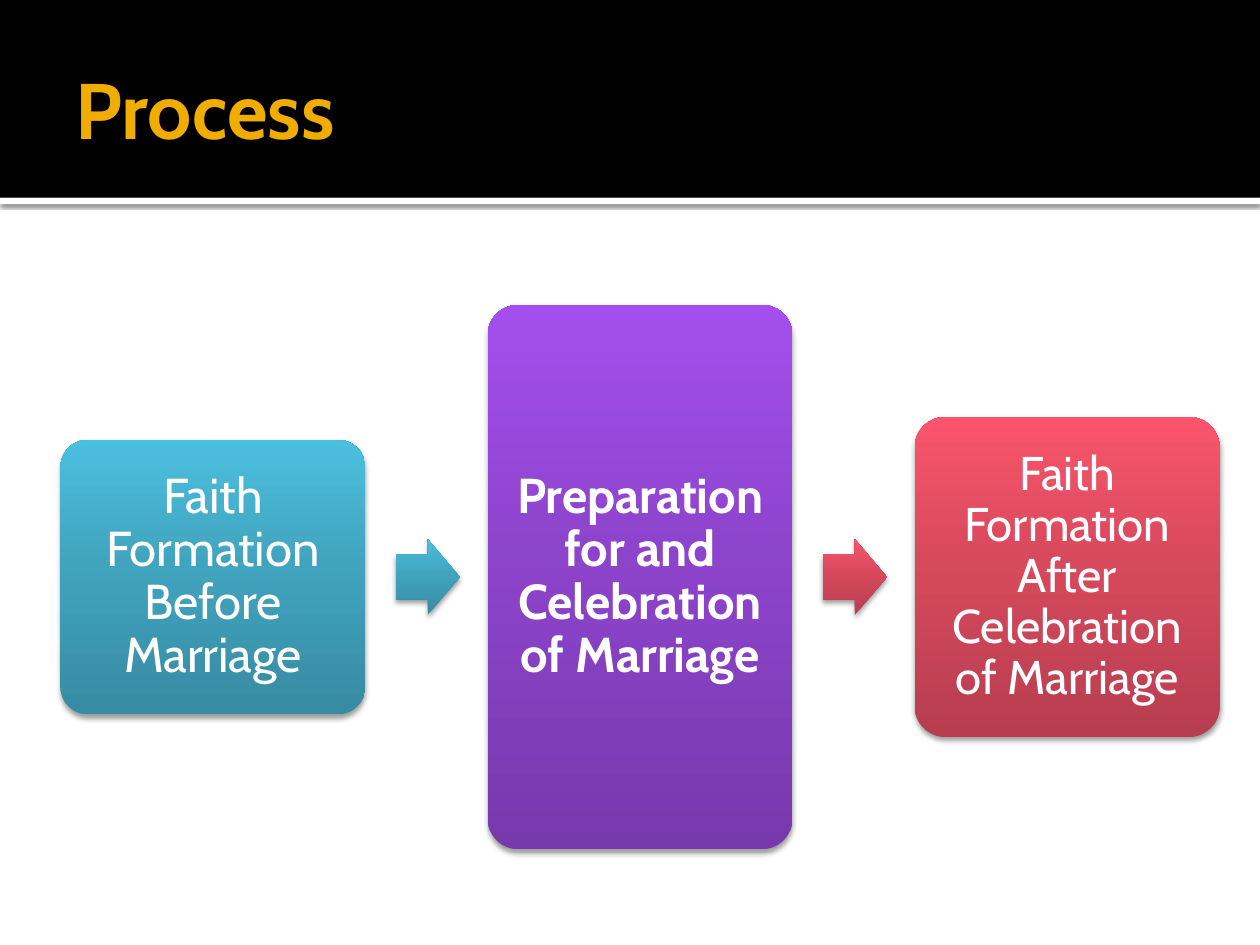
from copy import deepcopy
from lxml.etree import SubElement
from pptx import Presentation
from pptx.dml.color import RGBColor
from pptx.enum.shapes import MSO_SHAPE
from pptx.enum.text import MSO_ANCHOR, PP_ALIGN
from pptx.oxml.ns import qn
from pptx.util import Inches, Pt

FONT = "Cabin"
WHITE = RGBColor(0xFF, 0xFF, 0xFF)
BLACK = RGBColor(0x00, 0x00, 0x00)
GOLD = RGBColor(0xF0, 0xAD, 0x00)
BLUES = (RGBColor(0x37, 0x8B, 0xA2), RGBColor(0x41, 0xA4, 0xBF), RGBColor(0x4B, 0xBF, 0xDE))
PURPLES = (RGBColor(0x78, 0x39, 0xAD), RGBColor(0x8D, 0x44, 0xCC), RGBColor(0xA4, 0x4F, 0xED))
REDS = (RGBColor(0xB7, 0x3E, 0x4F), RGBColor(0xD7, 0x49, 0x5D), RGBColor(0xFA, 0x55, 0x6C))
GRADIENT_POSITIONS = (0, 0.55, 1)

STEPS = [
    ("Faith Formation Before Marriage", 2.18, 28, False, 0.12, BLUES),
    ("Preparation for and Celebration of Marriage", 4.32, 28, True, 0.12, PURPLES),
    ("Faith Formation After Celebration of Marriage", 2.54, 27, False, 0.11, REDS),
]
ARROW_COLORS = (BLUES, REDS)


def add_shadow(shape, opacity, blur, distance):
    effects = shape._element.spPr.find(qn("a:effectLst"))
    shadow = SubElement(effects, qn("a:outerShdw"), blurRad=str(Pt(blur)),
                        dist=str(Pt(distance)), dir="5400000", rotWithShape="0")
    color = SubElement(shadow, qn("a:srgbClr"), val=str(BLACK))
    SubElement(color, qn("a:alpha"), val=str(opacity * 1000))


def add_plain_shape(slide, kind, left, top, width, height):
    shape = slide.shapes.add_shape(kind, Inches(left), Inches(top), Inches(width), Inches(height))
    shape.shadow.inherit = False
    shape.line.fill.background()
    return shape


def add_bar(slide, left, top, width, height, color):
    bar = add_plain_shape(slide, MSO_SHAPE.RECTANGLE, left, top, width, height)
    bar.fill.solid()
    bar.fill.fore_color.rgb = color
    return bar


def add_gradient_shape(slide, kind, left, top, width, height, adjustments, colors):
    shape = add_plain_shape(slide, kind, left, top, width, height)
    for index, value in enumerate(adjustments):
        shape.adjustments[index] = value
    shape.fill.gradient()
    shape.fill.gradient_angle = 90
    stop_list = shape._element.spPr.find(".//" + qn("a:gsLst"))
    stop_list.append(deepcopy(stop_list[-1]))
    for stop, position, color in zip(shape.fill.gradient_stops, GRADIENT_POSITIONS, colors):
        stop.position = position
        stop.color.rgb = color
    add_shadow(shape, 38, 3.1, 2)
    return shape


def write_text(shape, text, size, bold, color, insets):
    text_frame = shape.text_frame
    text_frame.word_wrap = True
    text_frame.vertical_anchor = MSO_ANCHOR.MIDDLE
    (text_frame.margin_left, text_frame.margin_top,
     text_frame.margin_right, text_frame.margin_bottom) = map(Inches, insets)
    text_frame.text = text
    paragraph = text_frame.paragraphs[0]
    font = paragraph.runs[0].font
    font.name, font.size, font.bold = FONT, Pt(size), bold
    font.color.rgb = color
    return paragraph


def add_header(slide, left, top, width, height):
    stripe = add_bar(slide, left, top + height, width, 0.05, WHITE)
    add_shadow(stripe, 60, 2.5, 0.8)
    add_bar(slide, left, top, width, height, BLACK)
    title = slide.shapes.add_textbox(Inches(left + 0.5), Inches(top + 0.17),
                                     Inches(width - 1), Inches(height - 0.2))
    write_text(title, "Process", 45, True, GOLD, (0.1, 0.05, 0.05, 0.05))


def add_process(slide, left, top, width, height):
    step_width, arrow_width, arrow_height = 2.42, 0.51, 0.6
    pitch = (width - step_width) / (len(STEPS) - 1)
    middle = top + height / 2
    for index, (text, step_height, size, bold, inset, colors) in enumerate(STEPS):
        step_left = left + index * pitch
        step = add_gradient_shape(slide, MSO_SHAPE.ROUNDED_RECTANGLE, step_left,
                                  middle - step_height / 2, step_width, step_height,
                                  [0.1], colors)
        paragraph = write_text(step, text, size, bold, WHITE, [inset] * 4)
        paragraph.alignment = PP_ALIGN.CENTER
        paragraph.line_spacing = 0.9
        if index < len(ARROW_COLORS):
            add_gradient_shape(slide, MSO_SHAPE.RIGHT_ARROW, step_left + step_width + 0.24,
                               middle - arrow_height / 2, arrow_width, arrow_height,
                               [0.6, 0.5], ARROW_COLORS[index])


def main():
    presentation = Presentation()
    presentation.slide_width = Inches(10)
    presentation.slide_height = Inches(7.5)
    slide = presentation.slides.add_slide(presentation.slide_layouts[6])
    add_header(slide, 0, 0, 10, 1.57)
    add_process(slide, 0.48, 2.42, 9.2, 4.32)
    presentation.save("out.pptx")


if __name__ == "__main__":
    main()
